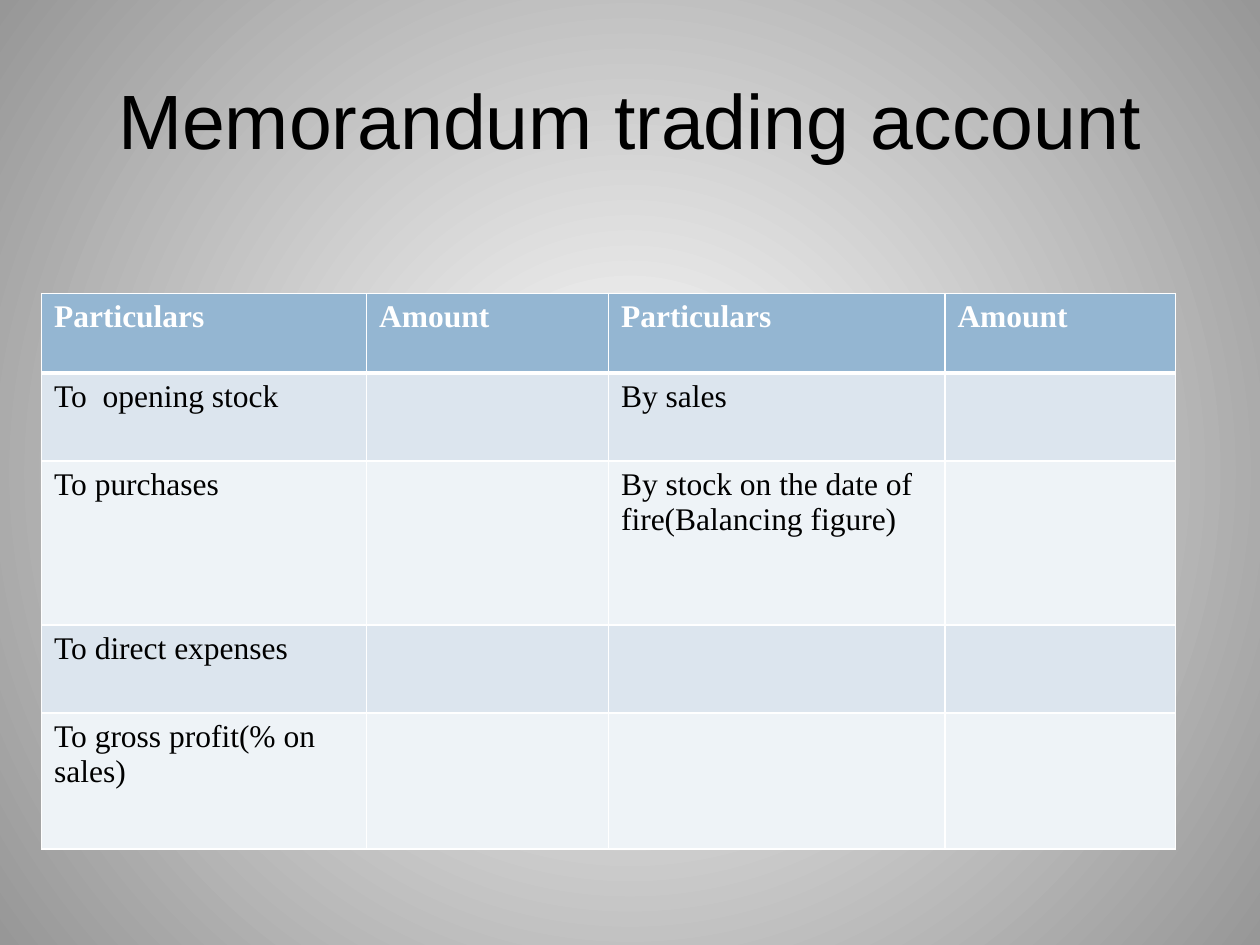
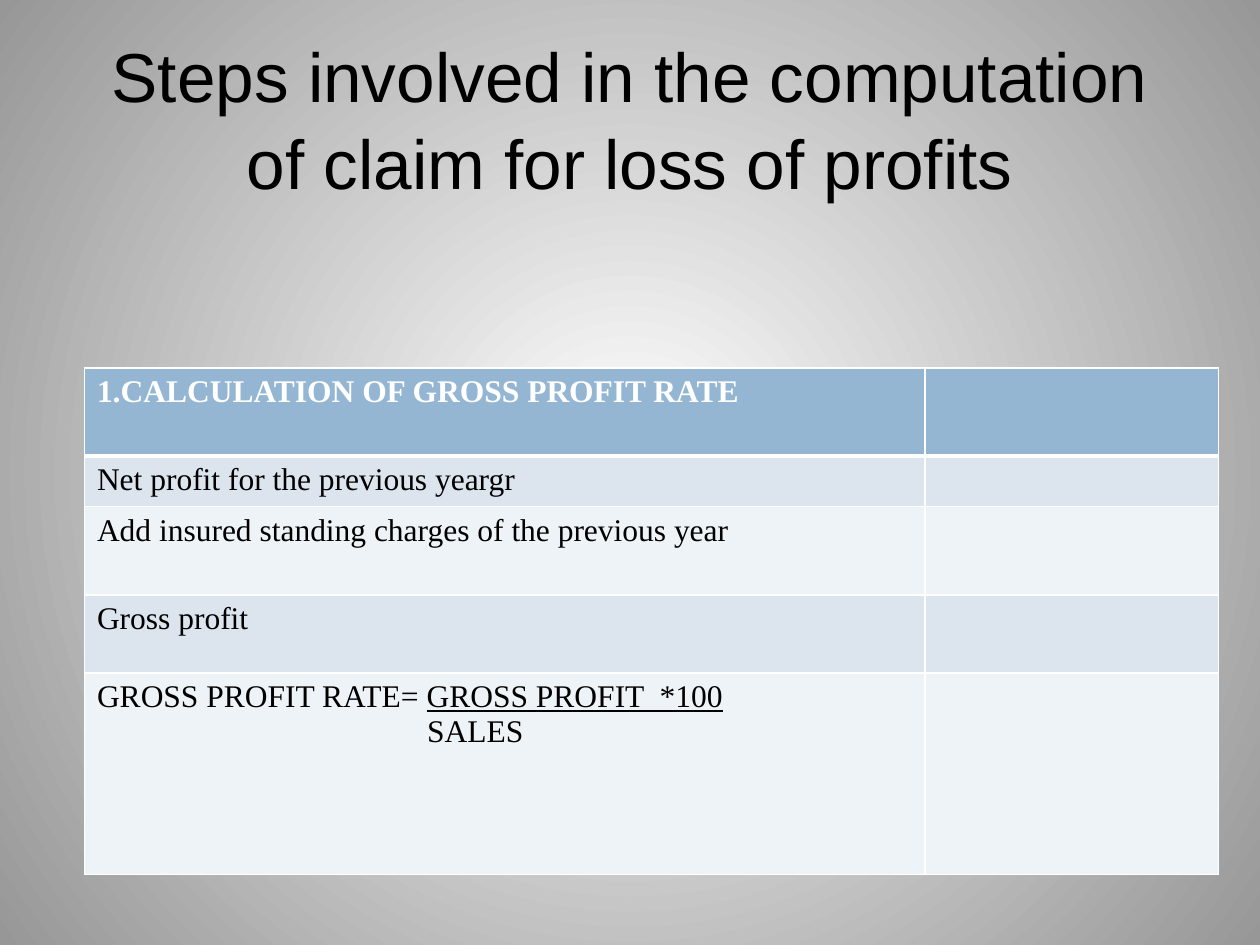
from dataclasses import dataclass

from lxml.etree import SubElement
from pptx import Presentation
from pptx.dml.color import RGBColor
from pptx.enum.text import MSO_ANCHOR, PP_ALIGN
from pptx.oxml import parse_xml
from pptx.oxml.ns import nsdecls, qn
from pptx.util import Inches, Pt

SLIDES = [
    {
        "title": "Memorandum trading account",
        "title_size": 44,
        "position": (0.33, 2.33),
        "columns": [2.58, 1.92, 2.67, 1.83],
        "row_heights": [0.63, 0.7, 1.3, 0.7, 1.08],
        "rows": [
            ["Particulars", "Amount", "Particulars", "Amount"],
            ["To  opening stock", "", "By sales", ""],
            ["To purchases", "", "By stock on the date of fire(Balancing figure)", ""],
            ["To direct expenses", "", "", ""],
            ["To gross profit(% on sales)", "", "", ""],
        ],
    },
    {
        "title": "Steps involved in the computation of claim for loss of profits",
        "title_size": 39.6,
        "position": (0.67, 2.92),
        "columns": [6.67, 2.33],
        "row_heights": [0.7, 0.4, 0.7, 0.62, 1.6],
        "rows": [
            ["1.CALCULATION OF GROSS PROFIT RATE", ""],
            ["Net profit for the previous yeargr", ""],
            ["Add insured standing charges of the previous year", ""],
            ["Gross profit", ""],
            ["", ""],
        ],
        "formula": {
            "cell": (4, 0),
            "label": "GROSS PROFIT RATE= ",
            "numerator": "GROSS PROFIT  *100",
            "denominator": "SALES",
            "indent": 2.62,
        },
    },
]


@dataclass(frozen=True)
class Theme:
    title_font: str = "Arial"
    body_font: str = "Times New Roman"
    body_size: int = 18
    text: str = "000000"
    header_text: str = "FFFFFF"
    header_fill: str = "94B6D2"
    bands: tuple = ("DCE5EE", "EEF3F7")
    border: str = "FFFFFF"
    border_width: int = 1
    header_border_width: int = 3
    background: tuple = ("FFFFFF", "979797")
    title_line_spacing: float = 1.05


THEME = Theme()


def format_run(run, font_name, size, color, bold=False):
    run.font.name = font_name
    run.font.size = Pt(size)
    run.font.bold = bold
    run.font.color.rgb = RGBColor.from_string(color)


def set_background(slide):
    fill = slide.background.fill
    fill.gradient()
    for stop, color, position in zip(fill.gradient_stops, THEME.background, (0, 1)):
        stop.color.rgb = RGBColor.from_string(color)
        stop.position = position
    gradient = slide.background._cSld.find(".//" + qn("a:gradFill"))
    gradient.remove(gradient.find(qn("a:lin")))
    radial = SubElement(gradient, qn("a:path"), {"path": "circle"})
    SubElement(radial, qn("a:fillToRect"), dict.fromkeys("ltrb", "50000"))


def add_title(slide, text, size):
    title = slide.shapes.add_textbox(Inches(0.5), Inches(0.3), Inches(9), Inches(1.25))
    frame = title.text_frame
    frame.word_wrap = True
    frame.vertical_anchor = MSO_ANCHOR.MIDDLE
    frame.text = text
    paragraph = frame.paragraphs[0]
    paragraph.alignment = PP_ALIGN.CENTER
    paragraph.line_spacing = THEME.title_line_spacing
    format_run(paragraph.runs[0], THEME.title_font, size, THEME.text)


def set_borders(cell, row_index):
    widths = dict.fromkeys("LRTB", THEME.border_width)
    if row_index == 0:
        widths["B"] = THEME.header_border_width
    elif row_index == 1:
        widths["T"] = THEME.header_border_width
    properties = cell._tc.get_or_add_tcPr()
    for index, (side, width) in enumerate(widths.items()):
        line = parse_xml(
            f'<a:ln{side} {nsdecls("a")} w="{Pt(width)}"><a:solidFill>'
            f'<a:srgbClr val="{THEME.border}"/></a:solidFill></a:ln{side}>'
        )
        properties.insert(index, line)


def write_formula(cell, formula):
    frame = cell.text_frame
    frame.text = formula["label"]
    numerator = frame.paragraphs[0].add_run()
    numerator.text = formula["numerator"]
    numerator.font.underline = True
    denominator = frame.add_paragraph()
    denominator.text = formula["denominator"]
    denominator._p.get_or_add_pPr().set("marL", str(Inches(formula["indent"])))


def style_cell(cell, row_index):
    header = row_index == 0
    fill = THEME.header_fill if header else THEME.bands[(row_index - 1) % 2]
    color = THEME.header_text if header else THEME.text
    cell.fill.solid()
    cell.fill.fore_color.rgb = RGBColor.from_string(fill)
    set_borders(cell, row_index)
    for paragraph in cell.text_frame.paragraphs:
        for run in paragraph.runs:
            format_run(run, THEME.body_font, THEME.body_size, color, header)


def add_account_table(slide, content):
    columns, heights = content["columns"], content["row_heights"]
    left, top = content["position"]
    table = slide.shapes.add_table(
        len(heights), len(columns), Inches(left), Inches(top),
        Inches(sum(columns)), Inches(sum(heights)),
    ).table
    for column, width in zip(table.columns, columns):
        column.width = Inches(width)
    for row, height in zip(table.rows, heights):
        row.height = Inches(height)
    for row_index, texts in enumerate(content["rows"]):
        for column_index, text in enumerate(texts):
            table.cell(row_index, column_index).text_frame.text = text
    if "formula" in content:
        write_formula(table.cell(*content["formula"]["cell"]), content["formula"])
    for row_index, row in enumerate(table.rows):
        for cell in row.cells:
            style_cell(cell, row_index)


def main():
    presentation = Presentation()
    presentation.slide_width = Inches(10)
    presentation.slide_height = Inches(7.5)
    for content in SLIDES:
        slide = presentation.slides.add_slide(presentation.slide_layouts[6])
        set_background(slide)
        add_title(slide, content["title"], content["title_size"])
        add_account_table(slide, content)
    presentation.save("out.pptx")


if __name__ == "__main__":
    main()
